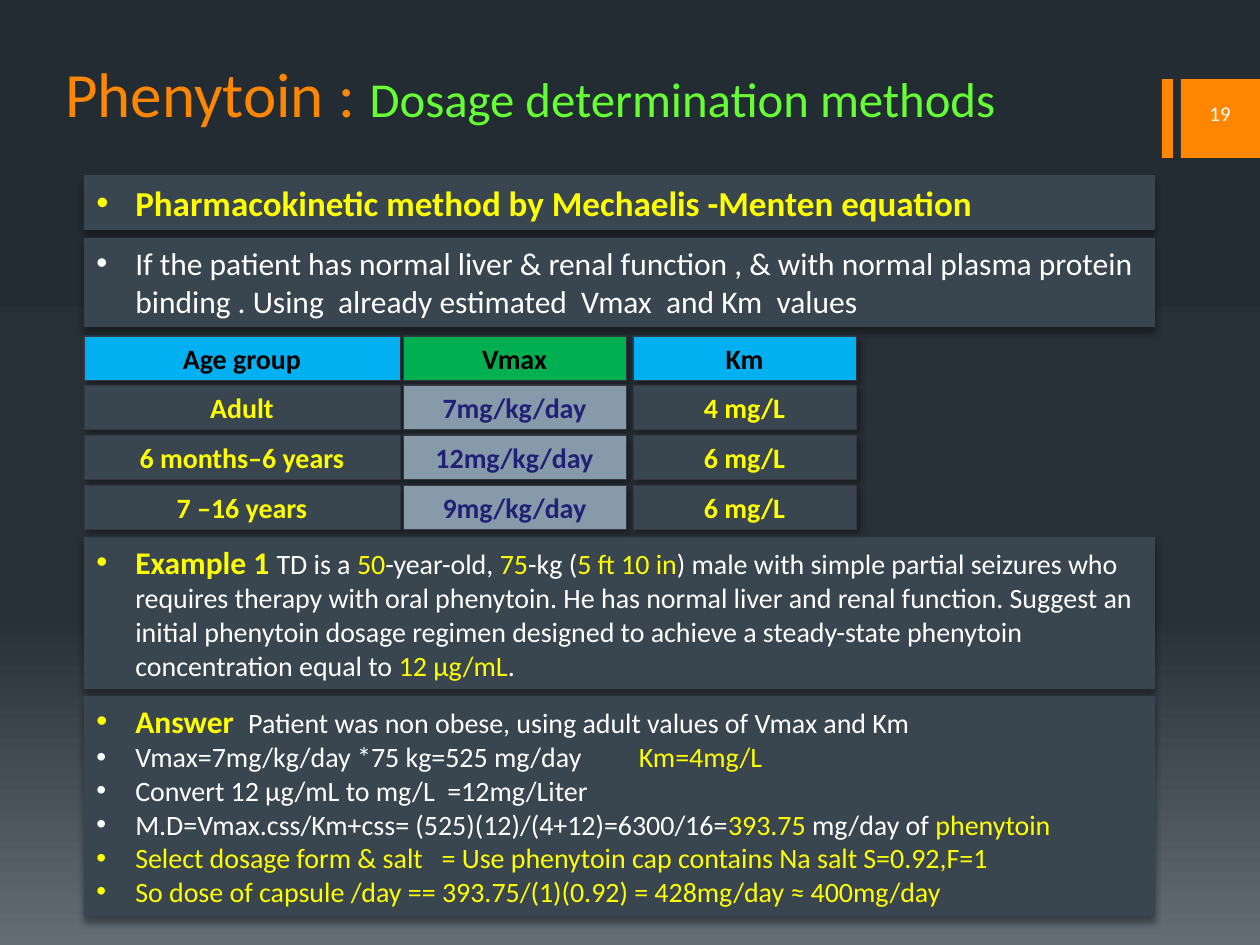
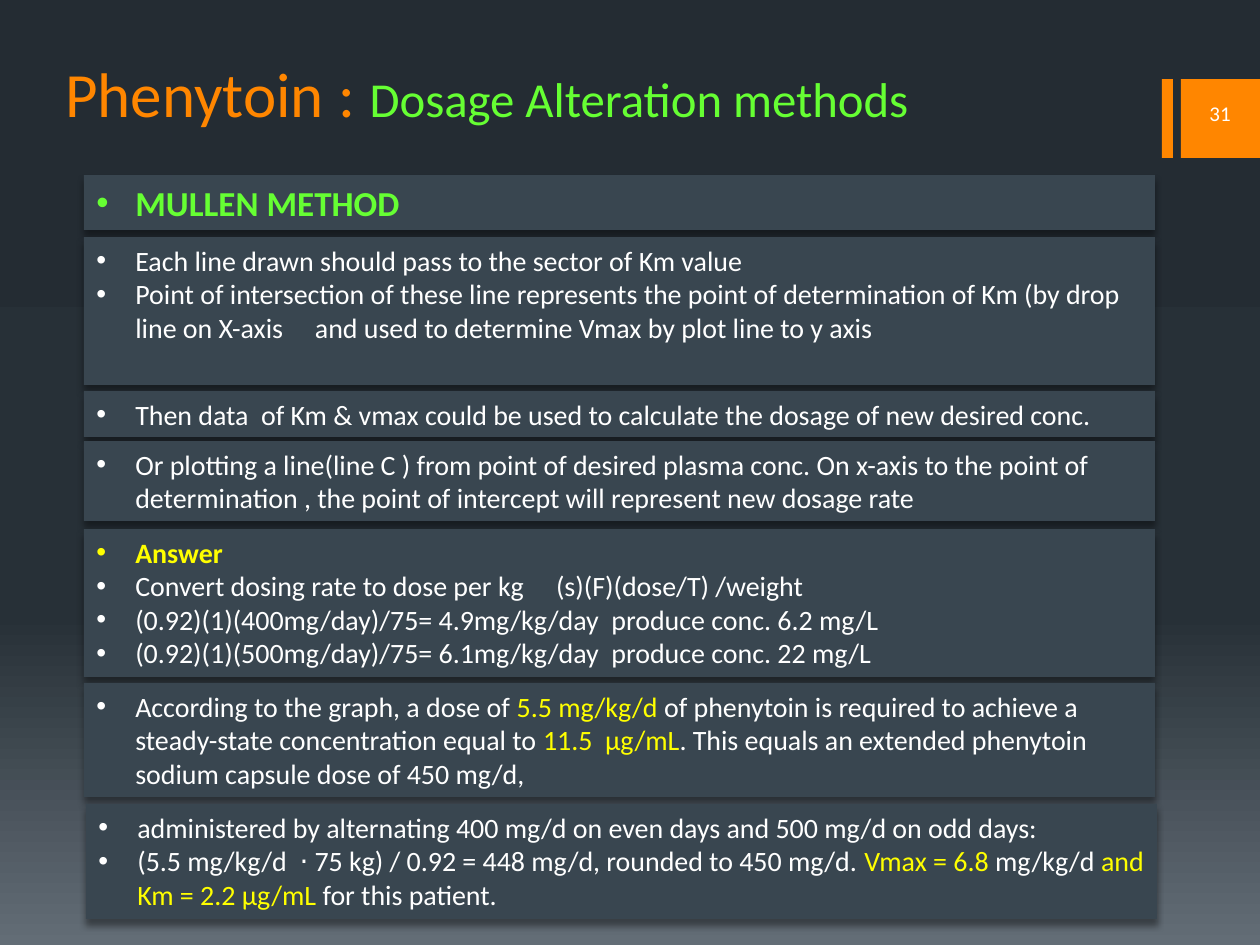
"""Build two phenytoin dosing slides: dosage determination and dosage alteration."""
import dataclasses

import pptx
import pptx.dml.color
import pptx.enum.shapes
import pptx.enum.text
import pptx.oxml
import pptx.oxml.ns
import pptx.util


@dataclasses.dataclass(frozen=True)
class Theme:
    font: str = "Calibri"
    orange: str = "FF8600"
    green: str = "66FF33"
    yellow: str = "FFFF00"
    white: str = "FFFFFF"
    black: str = "000000"
    navy: str = "222076"
    panel: str = "394650"
    cell_line: str = "38363E"
    head_blue: str = "00B0F0"
    head_green: str = "00B050"
    vmax_fill: str = "869AA9"
    backdrop: tuple = ((0, "242C33"), (65, "273037"), (100, "636D76"))
    title: float = 36
    subtitle: float = 27.9
    heading: float = 20
    lead: float = 18
    body: float = 16
    number: float = 12


T = Theme()
KEY = {"color": T.yellow}
BOLD_KEY = {"color": T.yellow, "bold": True}
LEAD = {**BOLD_KEY, "size": T.lead}
PANEL_X, PANEL_W = 84, 1071
BULLET_INDENT = 39
BARS = [(1162, 79, 11, 79), (1181, 79, 79, 79)]
TITLE_BOX = (53, 42, 1071, 94)
NUMBER_BOX = (1176, 95, 67, 36)
MIDDLE = pptx.enum.text.MSO_ANCHOR.MIDDLE
BOTTOM = pptx.enum.text.MSO_ANCHOR.BOTTOM
CENTER = pptx.enum.text.PP_ALIGN.CENTER
RIGHT = pptx.enum.text.PP_ALIGN.RIGHT


def gap(points):
    return " ", {"spacing": points}


GRID = {
    "top": 336, "bottom_row": 485, "row_height": 44,
    "columns": [
        {"x": 84, "w": 316, "head": T.head_blue, "fill": T.panel, "color": T.yellow},
        {"x": 403, "w": 223, "head": T.head_green, "fill": T.vmax_fill, "color": T.navy},
        {"x": 633, "w": 223, "head": T.head_blue, "fill": T.panel, "color": T.yellow},
    ],
    "rows": [
        ("Age group", "Vmax", "Km"),
        ("Adult", "7mg/kg/day", "4 mg/L"),
        ("6 months–6 years", "12mg/kg/day", "6 mg/L"),
        ("7 –16 years", "9mg/kg/day", "6 mg/L"),
    ],
}

SLIDES = [
    {
        "number": "19",
        "subtitle": "Dosage determination methods",
        "grid": GRID,
        "panels": [
            (PANEL_X, 175, 55, [
                [("Pharmacokinetic method by Mechaelis -Menten equation",
                  {**BOLD_KEY, "size": T.heading})],
            ]),
            (PANEL_X, 238, 89, [
                [("If the patient has normal liver & renal function , & with normal plasma "
                  "protein  binding . Using  already estimated  Vmax  and Km  values",
                  {"size": T.lead})],
            ]),
            (PANEL_X, 537, 152, [
                [("Example 1 ", LEAD), ("TD is a ", {}), ("50", KEY), ("-year-old, ", {}),
                 ("75", KEY), ("-kg (", {}), ("5 ft 10 in", KEY),
                 (") male with simple partial seizures who requires therapy with oral "
                  "phenytoin. He has normal liver and renal function. Suggest an initial "
                  "phenytoin dosage regimen designed to achieve a steady-state phenytoin "
                  "concentration equal to ", {}),
                 ("12 μg/mL", KEY), (".", {})],
            ]),
            (PANEL_X, 696, 220, [
                [("Answer  ", LEAD),
                 ("Patient was non obese, using adult values of Vmax and Km", {})],
                [("Vmax=7mg/kg/day *75 kg=525 mg/day", {}), gap(29), ("Km=4mg/L", KEY)],
                [("Convert 12 μg/mL to mg/L  =12mg/Liter", {})],
                [("M.D=Vmax.css/Km+css= (525)(12)/(4+12)=6300/16=", {}), ("393.75 ", KEY),
                 ("mg/day of ", {}), ("phenytoin", KEY)],
                [("Select dosage form & salt", KEY), gap(7),
                 ("= Use phenytoin cap contains Na salt S=0.92,F=1", KEY)],
                [("So dose of capsule /day == 393.75/(1)(0.92) = 428mg/day ≈ 400mg/day", KEY)],
            ]),
        ],
    },
    {
        "number": "31",
        "subtitle": "Dosage Alteration methods",
        "grid": None,
        "panels": [
            (PANEL_X, 175, 55, [
                [("MULLEN METHOD", {"color": T.green, "bold": True, "size": T.heading})],
            ]),
            (PANEL_X, 237, 148, [
                [("Each line drawn should pass to the sector of Km value", {})],
                [("Point of intersection of these line represents the point of "
                  "determination of Km (by drop line on X-axis", {}), gap(14.5),
                 ("and used to determine Vmax by plot line to y axis", {})],
            ]),
            (PANEL_X, 391, 46, [
                [("Then data  of Km & vmax could be used to calculate the dosage of new "
                  "desired conc.", {})],
            ]),
            (PANEL_X, 441, 80, [
                [("Or plotting a line(line C ) from point of desired plasma conc. On x-axis "
                  "to the point of determination , the point of intercept will represent "
                  "new dosage rate", {})],
            ]),
            (PANEL_X, 529, 148, [
                [("Answer", BOLD_KEY)],
                [("Convert dosing rate to dose per kg", {}), gap(14.5),
                 ("(s)(F)(dose/T) /weight", {})],
                [("(0.92)(1)(400mg/day)/75= 4.9mg/kg/day  produce conc. 6.2 mg/L", {})],
                [("(0.92)(1)(500mg/day)/75= 6.1mg/kg/day  produce conc. 22 mg/L", {})],
            ]),
            (PANEL_X, 683, 114, [
                [("According to the graph, a dose of ", {}), ("5.5 mg/kg/d ", KEY),
                 ("of phenytoin is required to achieve a steady-state concentration equal "
                  "to ", {}),
                 ("11.5  μg/mL", KEY),
                 (". This equals an extended phenytoin sodium capsule dose of 450 mg/d,", {})],
            ]),
            (PANEL_X + 2, 804, 115, [
                [("administered by alternating 400 mg/d on even days and 500 mg/d on odd "
                  "days:", {})],
                [("(5.5 mg/kg/d  ⋅ 75 kg) / 0.92 = 448 mg/d, rounded to 450 mg/d. ", {}),
                 ("Vmax = 6.8 ", KEY), ("mg/kg/d ", {}),
                 ("and Km = 2.2 μg/mL ", KEY), ("for this patient.", {})],
            ]),
        ],
    },
]


def px(n):
    return pptx.util.Emu(round(n * 914400 / 126))


def rgb(value):
    return pptx.dml.color.RGBColor.from_string(value)


def xml(tag, body="", attrs=""):
    ns = pptx.oxml.ns.nsdecls("a", "p")
    return pptx.oxml.parse_xml(f"<{tag} {ns} {attrs}>{body}</{tag}>")


def write(p, text, *, size=T.body, color=T.white, bold=False, spacing=0):
    r = p.add_run()
    r.text = text
    r.font.name = T.font
    r.font.size = pptx.util.Pt(size)
    r.font.bold = bold
    r.font.color.rgb = rgb(color)
    if spacing:
        r._r.get_or_add_rPr().set("spc", str(round(spacing * 100)))


def paint_backdrop(s):
    stops = "".join(
        f'<a:gs pos="{pos * 1000}"><a:srgbClr val="{color}"/></a:gs>'
        for pos, color in T.backdrop)
    bg = xml("p:bg", f'<p:bgPr><a:gradFill rotWithShape="1"><a:gsLst>{stops}</a:gsLst>'
             '<a:lin ang="5400000" scaled="0"/></a:gradFill><a:effectLst/></p:bgPr>')
    s._element.cSld.insert(0, bg)


def add_rect(s, box, fill, line=None, shadow_angle=None):
    sp = s.shapes.add_shape(pptx.enum.shapes.MSO_SHAPE.RECTANGLE, *map(px, box))
    sp.shadow.inherit = False
    sp.fill.solid()
    sp.fill.fore_color.rgb = rgb(fill)
    if line:
        sp.line.color.rgb = rgb(line)
        sp.line.width = pptx.util.Pt(0.25)
    else:
        sp.line.fill.background()
    if shadow_angle is not None:
        effects = sp._element.spPr.find(pptx.oxml.ns.qn("a:effectLst"))
        effects.append(xml(
            "a:outerShdw", '<a:srgbClr val="000000"><a:alpha val="40000"/></a:srgbClr>',
            f'blurRad="50800" dist="38100" dir="{shadow_angle * 60000}" rotWithShape="0"'))
    return sp


def add_label(s, box, runs, anchor, align=None):
    tf = s.shapes.add_textbox(*map(px, box)).text_frame
    tf.word_wrap = True
    tf.vertical_anchor = anchor
    p = tf.paragraphs[0]
    p.alignment = align
    for text, fmt in runs:
        write(p, text, **fmt)


def add_panel(s, x, top, height, paragraphs):
    sp = add_rect(s, (x, top, PANEL_W, height), T.panel, shadow_angle=90)
    tf = sp.text_frame
    tf.word_wrap = True
    tf.vertical_anchor = pptx.enum.text.MSO_ANCHOR.TOP
    for i, runs in enumerate(paragraphs):
        p = tf.add_paragraph() if i else tf.paragraphs[0]
        p.alignment = pptx.enum.text.PP_ALIGN.LEFT
        pPr = p._p.get_or_add_pPr()
        pPr.set("marL", str(px(BULLET_INDENT)))
        pPr.set("indent", str(px(-BULLET_INDENT)))
        pPr.append(xml("a:buFont", attrs='typeface="Arial"'))
        pPr.append(xml("a:buChar", attrs='char="•"'))
        for text, fmt in runs:
            write(p, text, **fmt)


def add_grid(s, grid):
    span = grid["bottom_row"] - grid["top"]
    last = len(grid["rows"]) - 1
    for i, row in enumerate(grid["rows"]):
        top = grid["top"] + span * i // last
        for column, text in zip(grid["columns"], row):
            fill, color = ((column["fill"], column["color"]) if i
                           else (column["head"], T.black))
            box = (column["x"], top, column["w"], grid["row_height"])
            tf = add_rect(s, box, fill, T.cell_line, 45).text_frame
            tf.word_wrap = True
            tf.vertical_anchor = MIDDLE
            tf.paragraphs[0].alignment = CENTER
            write(tf.paragraphs[0], text, color=color, bold=True)


def add_frame(s, subtitle, number):
    paint_backdrop(s)
    for bar in BARS:
        add_rect(s, bar, T.orange)
    title = [("Phenytoin : ", {"size": T.title, "color": T.orange}),
             (subtitle, {"size": T.subtitle, "color": T.green})]
    add_label(s, TITLE_BOX, title, BOTTOM)
    add_label(s, NUMBER_BOX, [(number, {"size": T.number})], MIDDLE, RIGHT)


def main():
    prs = pptx.Presentation()
    prs.slide_width, prs.slide_height = px(1260), px(945)
    for content in SLIDES:
        s = prs.slides.add_slide(prs.slide_layouts[6])
        add_frame(s, content["subtitle"], content["number"])
        for panel in content["panels"]:
            add_panel(s, *panel)
        if content["grid"]:
            add_grid(s, content["grid"])
    prs.save("out.pptx")


if __name__ == "__main__":
    main()
